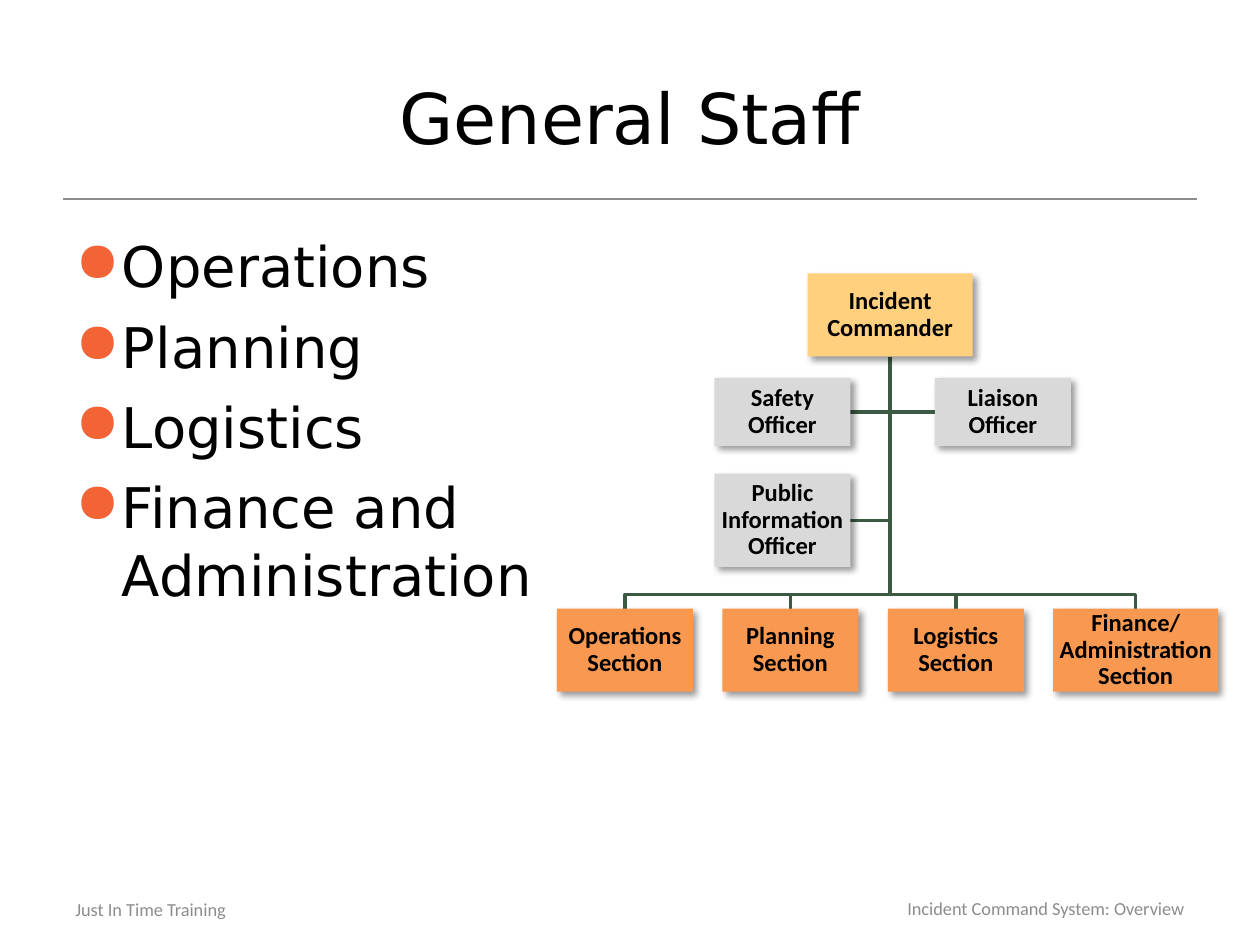
from dataclasses import dataclass

from pptx import Presentation
from pptx.dml.color import RGBColor
from pptx.enum.shapes import MSO_CONNECTOR, MSO_SHAPE
from pptx.enum.text import MSO_ANCHOR, PP_ALIGN
from pptx.oxml import parse_xml
from pptx.oxml.ns import nsdecls, qn
from pptx.oxml.xmlchemy import OxmlElement
from pptx.slide import Slide
from pptx.text.text import TextFrame
from pptx.util import Inches, Pt


@dataclass(frozen=True)
class Theme:
    ink: str = "000000"
    muted: str = "8C8C8C"
    bullet: str = "F26336"
    link: str = "3C5A43"
    chief: str = "FFD07D"
    staff: str = "D9D9D9"
    section: str = "F99951"
    wide: str = "DejaVu Sans"
    small: str = "Calibri"
    title: float = 40
    body: float = 32
    label: float = 14
    foot: float = 10.5


@dataclass(frozen=True)
class Area:
    left: float
    top: float
    width: float
    height: float

    @property
    def mid(self) -> float:
        return self.left + self.width / 2

    @property
    def right(self) -> float:
        return self.left + self.width

    @property
    def place(self) -> tuple:
        return tuple(Inches(v) for v in (self.left, self.top, self.width, self.height))


@dataclass(frozen=True)
class Unit:
    text: str
    area: Area
    fill: str


@dataclass(frozen=True)
class Style:
    face: str
    size: float
    color: str
    bold: bool = False
    align: PP_ALIGN = PP_ALIGN.LEFT
    spacing: float = 1.0


THEME = Theme()
HEAD = Style(THEME.wide, THEME.title, THEME.ink, align=PP_ALIGN.CENTER)
LIST = Style(THEME.wide, THEME.body, THEME.ink)
LABEL = Style(THEME.small, THEME.label, THEME.ink, True, PP_ALIGN.CENTER, 0.9)
FOOT = Style(THEME.small, THEME.foot, THEME.muted)
FOOT_END = Style(THEME.small, THEME.foot, THEME.muted, align=PP_ALIGN.RIGHT)

BOX = 1.08
SIDE, ROW = 5.67, 4.83
CHIEF = Unit("Incident Commander", Area(6.41, 2.17, 1.31, 0.66), THEME.chief)
OFFICERS = [
    Unit("Safety\nOfficer", Area(SIDE, 3, BOX, 0.54), THEME.staff),
    Unit("Liaison\nOfficer", Area(7.42, 3, BOX, 0.54), THEME.staff),
    Unit("Public Information Officer", Area(SIDE, 3.76, BOX, 0.74), THEME.staff),
]
SECTIONS = [
    Unit(text, Area(4.42 + 1.313 * i, ROW, width, 0.66), THEME.section)
    for i, (text, width) in enumerate([
        ("Operations Section", BOX),
        ("Planning Section", BOX),
        ("Logistics Section", BOX),
        ("Finance/ Administration Section", 1.31),
    ])
]
BULLETS = ["Operations", "Planning", "Logistics", "Finance and\nAdministration"]


def apply(target: object, values: dict) -> None:
    for name, value in values.items():
        setattr(target, name, value)


def write(frame: TextFrame, lines: list[str], style: Style, anchor: MSO_ANCHOR,
          inset: float | None = None, mark: bool = False) -> None:
    """Fill a frame with one paragraph per line, bulleted if mark is set."""
    apply(frame, {"word_wrap": True, "vertical_anchor": anchor})
    if inset is not None:
        sides = ("left", "top", "right", "bottom")
        apply(frame, {f"margin_{side}": Inches(inset) for side in sides})
    for i, line in enumerate(lines):
        para = frame.add_paragraph() if i else frame.paragraphs[0]
        para.text = line
        apply(para, {"alignment": style.align, "line_spacing": style.spacing})
        if mark:
            if i:
                para.space_before = Pt(7.5)
            add_bullet(para)
        for run in para.runs:
            apply(run.font, {"name": style.face, "size": Pt(style.size), "bold": style.bold})
            run.font.color.rgb = RGBColor.from_string(style.color)


def add_bullet(para: object) -> None:
    props = para._p.get_or_add_pPr()
    indent = Inches(0.37)
    props.set("marL", str(indent))
    props.set("indent", str(-indent))
    props.append(parse_xml(
        f'<a:buClr {nsdecls("a")}><a:srgbClr val="{THEME.bullet}"/></a:buClr>'))
    sign = OxmlElement("a:buChar")
    sign.set("char", "●")
    props.append(sign)


def add_text(slide: Slide, area: Area, lines: list[str], style: Style,
             anchor: MSO_ANCHOR = MSO_ANCHOR.MIDDLE, mark: bool = False) -> None:
    write(slide.shapes.add_textbox(*area.place).text_frame, lines, style, anchor, mark=mark)


def add_unit(slide: Slide, unit: Unit) -> None:
    """Draw one labelled box with a soft shadow."""
    shape = slide.shapes.add_shape(MSO_SHAPE.RECTANGLE, *unit.area.place)
    shape.fill.solid()
    shape.fill.fore_color.rgb = RGBColor.from_string(unit.fill)
    shape.line.fill.background()
    shape.shadow.inherit = False
    shape._element.spPr.find(qn("a:effectLst")).append(parse_xml(
        f'<a:outerShdw {nsdecls("a")} blurRad="{Pt(4)}" dist="{Pt(3)}" dir="2700000" '
        'algn="tl" rotWithShape="0"><a:srgbClr val="000000"><a:alpha val="40000"/>'
        '</a:srgbClr></a:outerShdw>'))
    write(shape.text_frame, [unit.text], LABEL, MSO_ANCHOR.MIDDLE, inset=0.01)


def add_link(slide: Slide, points: list[tuple[float, float]]) -> None:
    """Draw an open, bent line through the points."""
    start, *rest = [(Inches(x), Inches(y)) for x, y in points]
    path = slide.shapes.build_freeform(*start)
    path.add_line_segments(rest, close=False)
    shape = path.convert_to_shape()
    shape.fill.background()
    shape.line.color.rgb = RGBColor.from_string(THEME.link)
    shape.line.width = Pt(2)
    shape.shadow.inherit = False


def add_rule(slide: Slide) -> None:
    y = Inches(1.58)
    rule = slide.shapes.add_connector(MSO_CONNECTOR.STRAIGHT, Inches(0.5), y, Inches(9.5), y)
    rule.line.color.rgb = RGBColor.from_string(THEME.muted)
    rule.line.width = Pt(0.75)
    rule._element.spPr.append(OxmlElement("a:effectLst"))


def add_chart(slide: Slide) -> None:
    """Draw the links first, then the boxes above them."""
    trunk, base, bus = CHIEF.area.mid, 2.83, 4.72
    for unit in OFFICERS:
        area = unit.area
        y = area.top + area.height / 2
        edge = area.right if area.mid < trunk else area.left
        add_link(slide, [(trunk, base), (trunk, y), (edge, y)])
    for unit in SECTIONS:
        x = unit.area.mid
        add_link(slide, [(trunk, base), (trunk, bus), (x, bus), (x, ROW)])
    for unit in [CHIEF, *SECTIONS, *OFFICERS]:
        add_unit(slide, unit)


def main() -> None:
    deck = Presentation()
    apply(deck, {"slide_width": Inches(10), "slide_height": Inches(7.5)})
    slide = deck.slides.add_slide(deck.slide_layouts[6])
    add_rule(slide)
    add_text(slide, Area(0.5, 0.3, 9, 1.25), ["General Staff"], HEAD)
    add_text(slide, Area(0.5, 1.79, 9, 5.04), BULLETS, LIST, MSO_ANCHOR.TOP, mark=True)
    add_text(slide, Area(0.5, 7.08, 2.33, 0.27), ["Just In Time Training"], FOOT)
    add_text(slide, Area(6.33, 7.08, 3.17, 0.25),
             ["Incident Command System: Overview"], FOOT_END)
    add_chart(slide)
    deck.save("out.pptx")


if __name__ == "__main__":
    main()
